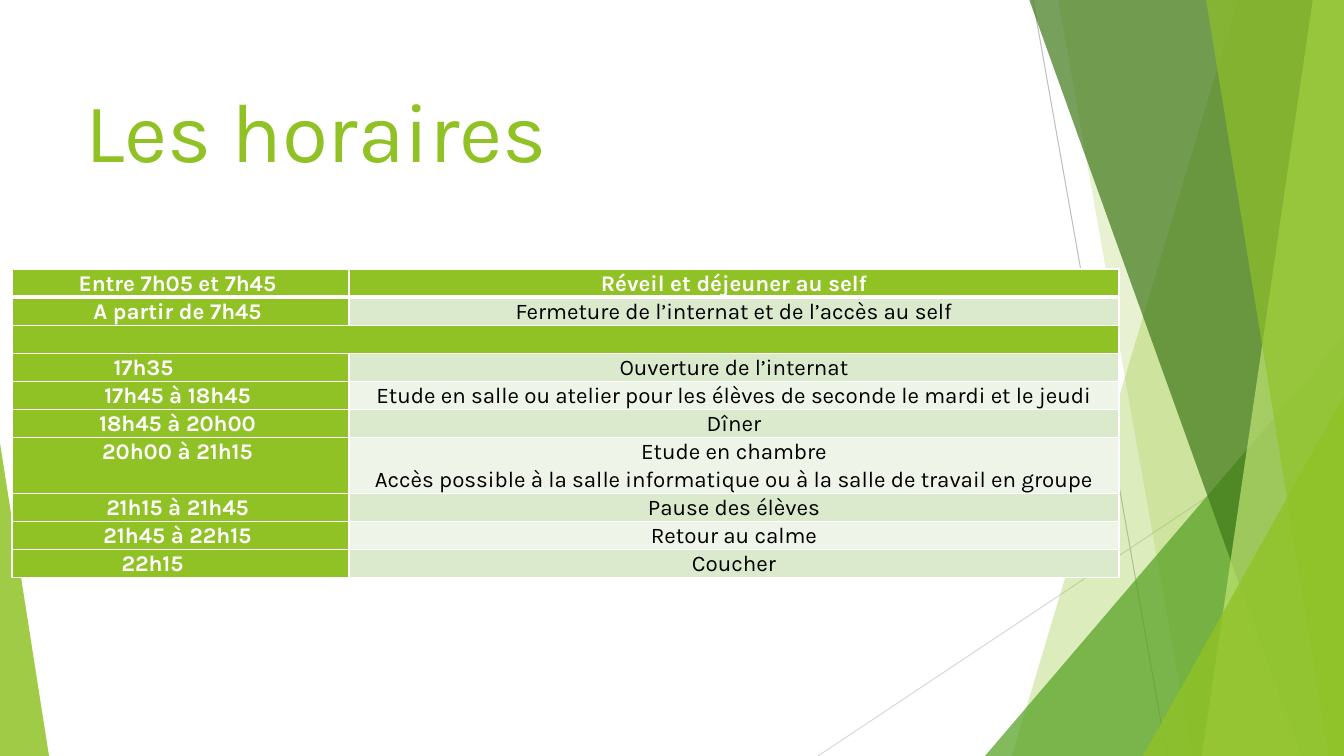
from lxml.etree import SubElement as Sub
from pptx import Presentation
from pptx.dml.color import RGBColor as Rgb
from pptx.enum.shapes import MSO_CONNECTOR as Link, MSO_SHAPE as Form
from pptx.enum.text import MSO_ANCHOR as Anchor, MSO_AUTO_SIZE as Fit, PP_ALIGN as Align
from pptx.oxml.ns import qn
from pptx.util import Pt

PX = 9072
WIDE, HIGH = 1344, 756
THEME = {
    "font": "Karla", "title": 60, "cell": 16,
    "lime": "90C226", "leaf": "54A021", "pine": "3F7819", "pale": "C0E474",
    "band": ["EEF4E8", "DBE9CD"], "white": "FFFFFF", "black": "000000",
    "grey": "BFBFBF", "mist": "D9D9D9",
}


def write(frame, text, size, color, bold=False, align=Align.LEFT, space=1.0):
    frame.text = text
    for para in frame.paragraphs:
        para.alignment = align
        para.line_spacing = space
        para._p.get_or_add_endParaRPr().set("sz", str(size * 100))
        for run in para.runs:
            run.font.name = THEME["font"]
            run.font.size = Pt(size)
            run.font.bold = bold
            run.font.color.rgb = Rgb.from_string(color)


def paint(shape, color, alpha):
    shape.shadow.inherit = False
    shape.fill.solid()
    shape.fill.fore_color.rgb = Rgb.from_string(THEME[color])
    shape.line.fill.background()
    tone = shape.fill._xPr.find(".//" + qn("a:srgbClr"))
    Sub(tone, qn("a:alpha"), val=str(alpha * 1000))


deck = Presentation()
deck.slide_width, deck.slide_height = WIDE * PX, HIGH * PX
slide = deck.slides.add_slide(deck.slide_layouts[5])
shapes = slide.shapes

title = shapes.title
title.left, title.top, title.width, title.height = 75 * PX, 67 * PX, 948 * PX, 145 * PX
frame = title.text_frame
frame.auto_size = Fit.NONE
frame.vertical_anchor = Anchor.TOP
frame.margin_top = 12 * PX
write(frame, "Les horaires", THEME["title"], THEME["lime"])

for ends, color in [((1033, 0, 1167, HIGH), "grey"), ((WIDE, 406, 818, HIGH), "mist")]:
    line = shapes.add_connector(Link.STRAIGHT, *[n * PX for n in ends])
    line.line.color.rgb = Rgb.from_string(THEME[color])
    line.line.width = Pt(0.75)
    Sub(line._element.spPr, qn("a:effectLst"))

shards = [
    ("band", 1238, 1012, "lime", 30),
    ("band", 1058, 1192, "lime", 20),
    ("peak", (985, 336, 359, 420), 1, "leaf", 72),
    ("band", 1029, 1301, "pine", 70),
    ("band", 1313, 1202, "pale", 70),
    ("band", 1206, 1329, "lime", 65),
    ("peak", (1143, 396, 201, 360), 1, "lime", 80),
    ("peak", (0, 443, 49, 313), 0, "lime", 85),
]
for kind, first, last, color, alpha in shards:
    if kind == "band":
        path = shapes.build_freeform(first, -1, scale=PX)
        path.add_line_segments([(WIDE, -1), (WIDE, HIGH), (last, HIGH)], close=True)
        shard = path.convert_to_shape()
    else:
        shard = shapes.add_shape(Form.ISOSCELES_TRIANGLE, *[n * PX for n in first])
        shard.adjustments[0] = last
    paint(shard, color, alpha)

ROW, PAD, GAP = 28, 7, 6
hours = [
    ("Entre 7h05 et 7h45", "Réveil et déjeuner au self", GAP),
    ("A partir de 7h45", "Fermeture de l’internat et de l’accès au self", GAP),
    ("", "", 0),
    ("17h35", "Ouverture de l’internat", 74),
    ("17h45 à 18h45", "Etude en salle ou atelier pour les élèves de seconde le mardi et le jeudi", GAP),
    ("18h45 à 20h00", "Dîner", GAP),
    ("20h00 à 21h15", "Etude en chambre\nAccès possible à la salle informatique "
     "ou à la salle de travail en groupe", GAP),
    ("21h15 à 21h45", "Pause des élèves", GAP),
    ("21h45 à 22h15", "Retour au calme", GAP),
    ("22h15", "Coucher", 56),
]
lines = [1 + what.count("\n") for _, what, _ in hours]
grid = shapes.add_table(len(hours), 2, 12 * PX, 269 * PX, 1107 * PX, sum(lines) * ROW * PX).table
grid.columns[0].width, grid.columns[1].width = 337 * PX, 770 * PX

for r, (time, what, shift) in enumerate(hours):
    grid.rows[r].height = lines[r] * ROW * PX
    for c, text in enumerate((time, what)):
        cell = grid.cell(r, c)
        green = c == 0 or r == 0 or not time
        cell.margin_top = cell.margin_bottom = 0
        cell.margin_left = PAD * PX
        cell.margin_right = (PAD + (shift if c == 0 else 0)) * PX
        cell.vertical_anchor = Anchor.MIDDLE if c else Anchor.TOP
        write(cell.text_frame, text, THEME["cell"], THEME["white" if green else "black"],
              bold=green, align=Align.CENTER, space=1.07)
        for side in "LRTB":
            thick = (r, side) in [(0, "B"), (1, "T")]
            edge = Sub(cell._tc.get_or_add_tcPr(), qn("a:ln" + side), w=str(Pt(3 if thick else 1)))
            Sub(Sub(edge, qn("a:solidFill")), qn("a:srgbClr"), val=THEME["white"])
        cell.fill.solid()
        cell.fill.fore_color.rgb = Rgb.from_string(THEME["lime"] if green else THEME["band"][r % 2])
    if not time:
        grid.cell(r, 0).merge(grid.cell(r, 1))

deck.save("out.pptx")
